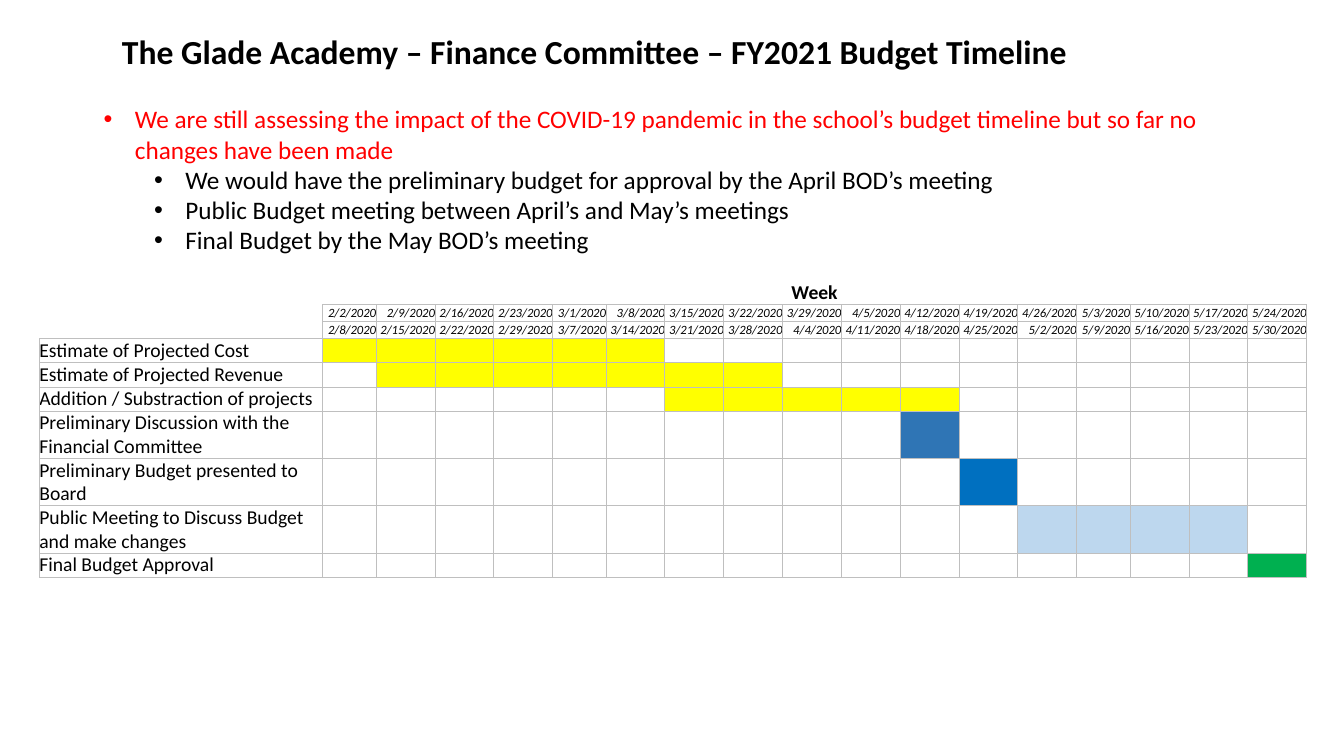
import pptx
import pptx.util
import pptx.dml.color
import pptx.enum.text
import pptx.oxml
import pptx.oxml.ns
from pptx.util import Inches

COLORS = {"text": "000000", "alert": "FF0000", "grid": "BFBFBF", "draft": "FFFF00",
          "review": "2F75B5", "board": "0070C0", "public": "BDD7EE", "final": "00B050"}
ALIGN = pptx.enum.text.PP_ALIGN
ANCHOR = pptx.enum.text.MSO_ANCHOR
NO_STYLE = "{2D5ABB26-0587-4C30-8999-92F81FD0307C}"

TITLE = "The Glade Academy – Finance Committee – FY2021 Budget Timeline"
BULLETS = [
    (0, "alert", "We are still assessing the impact of the COVID-19 pandemic in the school’s "
                 "budget timeline but so far no changes have been made"),
    (1, "text", "We would have the preliminary budget for approval by the April BOD’s meeting"),
    (1, "text", "Public Budget meeting between April’s and May’s meetings"),
    (1, "text", "Final Budget by the May BOD’s meeting"),
]
WEEK_STARTS = ("2/2 2/9 2/16 2/23 3/1 3/8 3/15 3/22 3/29 4/5 4/12 4/19 4/26 "
               "5/3 5/10 5/17 5/24").split()
WEEK_ENDS = ("2/8 2/15 2/22 2/29 3/7 3/14 3/21 3/28 4/4 4/11 4/18 4/25 5/2 "
             "5/9 5/16 5/23 5/30").split()
TASKS = [
    ("Estimate of Projected Cost", 1, 6, "draft"),
    ("Estimate of Projected Revenue", 2, 8, "draft"),
    ("Addition / Substraction of projects", 7, 11, "draft"),
    ("Preliminary Discussion with the Financial Committee", 11, 11, "review"),
    ("Preliminary Budget presented to Board", 12, 12, "board"),
    ("Public Meeting to Discuss Budget and make changes", 13, 16, "public"),
    ("Final Budget Approval", 17, 17, "final"),
]
ROW_HEIGHTS = [0.24, 0.17, 0.17, 0.24, 0.24, 0.24, 0.47, 0.47, 0.47, 0.24]
TABLE_WIDTH, TASK_WIDTH, NARROW_WIDTH = 12.57, 2.81, 0.53
NARROW_WEEKS = (1, 5, 14)


class SlideBuilder:
    """Holds the text style and the current slide."""

    def __init__(self, prs, font="Calibri"):
        self.font = font
        self.s = prs.slides.add_slide(prs.slide_layouts[5])

    def color(self, name):
        return pptx.dml.color.RGBColor.from_string(COLORS[name])

    def style(self, p, size, color="text", bold=False, italic=False, align=ALIGN.LEFT):
        p.alignment = align
        f = p.font
        f.name, f.size, f.bold, f.italic = self.font, pptx.util.Pt(size), bold, italic
        f.color.rgb = self.color(color)

    def title(self, text, left, top, width, height):
        sp = self.s.shapes.title
        sp.left, sp.top, sp.width, sp.height = map(Inches, (left, top, width, height))
        tf = sp.text_frame
        tf.text = text
        tf.word_wrap = False
        tf.auto_size = pptx.enum.text.MSO_AUTO_SIZE.SHAPE_TO_FIT_TEXT
        tf.vertical_anchor = ANCHOR.TOP
        self.style(tf.paragraphs[0], 24, bold=True)

    def bullets(self, items, left, top, width, height):
        tf = self.s.shapes.add_textbox(*map(Inches, (left, top, width, height))).text_frame
        tf.word_wrap = True
        for i, (level, color, text) in enumerate(items):
            p = tf.add_paragraph() if i else tf.paragraphs[0]
            p.text, p.level = text, level
            self.style(p, 18, color)
            pPr = p._p.get_or_add_pPr()
            pPr.set("marL", str(Inches(0.31 + 0.5 * level)))
            pPr.set("indent", str(Inches(-0.31)))
            ns = pptx.oxml.ns.nsdecls("a")
            pPr.insert(0, pptx.oxml.parse_xml(f'<a:buFont {ns} typeface="Arial"/>'))
            pPr.insert(1, pptx.oxml.parse_xml(f'<a:buChar {ns} char="•"/>'))

    def table(self, left, top, col_widths, row_heights):
        gf = self.s.shapes.add_table(len(row_heights), len(col_widths), Inches(left), Inches(top),
                                     Inches(sum(col_widths)), Inches(sum(row_heights)))
        t = gf.table
        t.first_row = t.horz_banding = False
        t._tbl.tblPr.find(pptx.oxml.ns.qn("a:tableStyleId")).text = NO_STYLE
        for col, width in zip(t.columns, col_widths):
            col.width = Inches(width)
        for row, height in zip(t.rows, row_heights):
            row.height = Inches(height)
        return t

    def cell(self, c, text="", size=9, fill=None, sides="LRTB", **style):
        c.margin_left = c.margin_right = c.margin_top = c.margin_bottom = 0
        c.vertical_anchor = ANCHOR.MIDDLE
        p = c.text_frame.paragraphs[0]
        p.text = text
        self.style(p, size, **style)
        if not text:
            end = pptx.oxml.parse_xml(
                f'<a:endParaRPr {pptx.oxml.ns.nsdecls("a")} sz="{size * 100}"/>')
            p._p.append(end)
        tcPr = c._tc.get_or_add_tcPr()
        for side in "LRTB":
            line = (f'<a:solidFill><a:srgbClr val="{COLORS["grid"]}"/></a:solidFill>'
                    if side in sides else "<a:noFill/>")
            tcPr.append(pptx.oxml.parse_xml(
                f'<a:ln{side} {pptx.oxml.ns.nsdecls("a")} w="6350">{line}</a:ln{side}>'))
        if fill:
            c.fill.solid()
            c.fill.fore_color.rgb = self.color(fill)
        else:
            c.fill.background()

    def timeline(self, left, top):
        weeks = range(1, len(WEEK_STARTS) + 1)
        narrow = len(NARROW_WEEKS)
        wide_width = (TABLE_WIDTH - TASK_WIDTH - narrow * NARROW_WIDTH) / (len(weeks) - narrow)
        widths = [TASK_WIDTH] + [NARROW_WIDTH if w in NARROW_WEEKS else wide_width for w in weeks]
        t = self.table(left, top, widths, ROW_HEIGHTS)
        for row, sides in enumerate(("", "R", "RB")):
            self.cell(t.cell(row, 0), sides=sides)
        t.cell(0, 1).merge(t.cell(0, len(weeks)))
        for w in weeks:
            self.cell(t.cell(0, w), "Week" if w == 1 else "", 14, sides="B",
                      bold=True, align=ALIGN.CENTER)
            for row, dates in enumerate((WEEK_STARTS, WEEK_ENDS), 1):
                self.cell(t.cell(row, w), f"{dates[w - 1]}/2020", italic=True, align=ALIGN.RIGHT)
        for row, (task, first, last, fill) in enumerate(TASKS, 3):
            self.cell(t.cell(row, 0), task, 14)
            for w in weeks:
                self.cell(t.cell(row, w), fill=fill if first <= w <= last else None)


def main():
    prs = pptx.Presentation()
    prs.slide_width, prs.slide_height = Inches(13.33), Inches(7.5)
    slide = SlideBuilder(prs)
    slide.title(TITLE, 1.11, 0.26, 9.69, 0.5)
    slide.bullets(BULLETS, 0.93, 0.98, 11.68, 1.62)
    slide.timeline(0.39, 2.78)
    prs.save("out.pptx")


if __name__ == "__main__":
    main()
